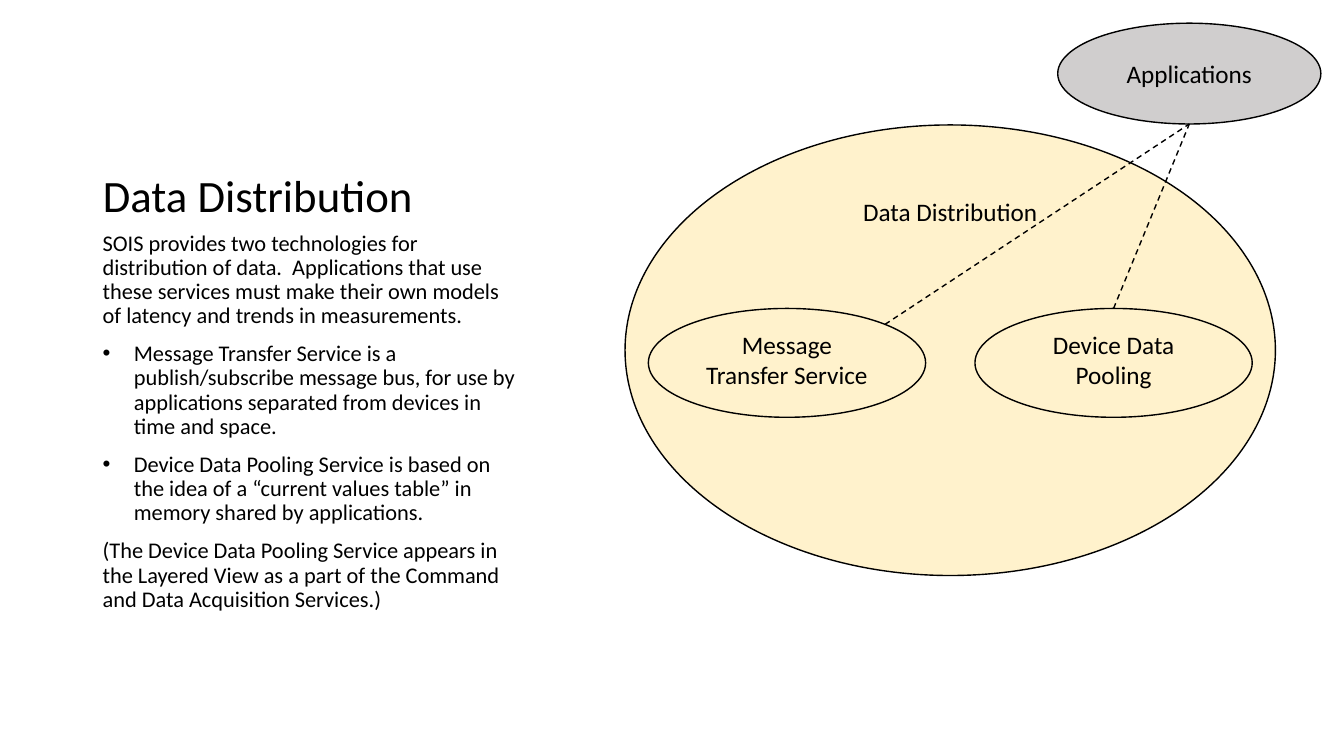
from math import cos, radians, sin

from lxml import etree
from pptx import Presentation
from pptx.dml.color import RGBColor
from pptx.enum.dml import MSO_LINE
from pptx.enum.shapes import MSO_CONNECTOR, MSO_SHAPE
from pptx.enum.text import MSO_ANCHOR, MSO_AUTO_SIZE, PP_ALIGN
from pptx.oxml.ns import qn
from pptx.util import Inches, Pt

OVAL, LINE, DASH = MSO_SHAPE.OVAL, MSO_CONNECTOR.STRAIGHT, MSO_LINE.DASH
TOP, MIDDLE, BOTTOM = MSO_ANCHOR.TOP, MSO_ANCHOR.MIDDLE, MSO_ANCHOR.BOTTOM
LEFT, CENTER = PP_ALIGN.LEFT, PP_ALIGN.CENTER
BLACK = RGBColor(0x00, 0x00, 0x00)
CREAM = RGBColor(0xFF, 0xF2, 0xCC)
GRAY = RGBColor(0xD0, 0xCE, 0xCE)
WIDE, HIGH = Inches(13.33), Inches(7.5)
INDENT = Inches(0.31)
FONT = "Calibri"

TIGHT = {"alignment": LEFT, "line_spacing": 0.9, "space_before": Pt(10)}
HEAD = {"alignment": LEFT, "line_spacing": 0.9, "space_before": Pt(0)}
MID = {"alignment": CENTER}

# Each entry: text, bulleted
BODY = [
    ("SOIS provides two technologies for distribution of data.  Applications "
     "that use these services must make their own models of latency and "
     "trends in measurements.", False),
    ("Message Transfer Service is a publish/subscribe message bus, for use by "
     "applications separated from devices in time and space.", True),
    ("Device Data Pooling Service is based on the idea of a “current values "
     "table” in memory shared by applications.", True),
    ("(The Device Data Pooling Service appears in the Layered View as a part "
     "of the Command and Data Acquisition Services.)", False),
]


def box(x, y, w, h):
    """Turn percentages of the slide into left, top, width and height."""
    return [round(size * part / 100)
            for size, part in zip((WIDE, HIGH, WIDE, HIGH), (x, y, w, h))]


def place(shape, area):
    for name, value in zip(("left", "top", "width", "height"), area):
        setattr(shape, name, value)


def frame(shape, anchor):
    text = shape.text_frame
    form = {"word_wrap": True, "auto_size": MSO_AUTO_SIZE.NONE,
            "vertical_anchor": anchor}
    for name, value in form.items():
        setattr(text, name, value)
    return text


def write(para, text, size, form):
    for name, value in form.items():
        setattr(para, name, value)
    run = para.add_run()
    run.text = text
    run.font.name = FONT
    run.font.size = Pt(size)
    run.font.color.rgb = BLACK


def bullet(para):
    props = para._p.get_or_add_pPr()
    props.set("marL", str(INDENT))
    props.set("indent", str(-INDENT))
    font = etree.SubElement(props, qn("a:buFont"))
    font.set("typeface", "Arial")
    mark = etree.SubElement(props, qn("a:buChar"))
    mark.set("char", "•")


def title(slide, text, area):
    shape = slide.shapes.title
    place(shape, area)
    write(frame(shape, BOTTOM).paragraphs[0], text, 32, HEAD)


def prose(slide, items, area):
    text = frame(slide.shapes.add_textbox(*area), TOP)
    for i, (words, marked) in enumerate(items):
        para = text.add_paragraph() if i else text.paragraphs[0]
        write(para, words, 16, TIGHT)
        if marked:
            bullet(para)


def oval(slide, text, area, fill=CREAM, anchor=TOP):
    shape = slide.shapes.add_shape(OVAL, *area)
    shape.shadow.inherit = False
    shape.fill.solid()
    shape.fill.fore_color.rgb = fill
    shape.line.color.rgb = BLACK
    shape.line.width = Pt(1)
    write(frame(shape, anchor).paragraphs[0], text, 18, MID)
    return shape


def rim(shape, angle):
    """Find the point on an oval's edge, in degrees clockwise from the right."""
    turn = radians(angle)
    return (round(shape.left + shape.width * (1 + cos(turn)) / 2),
            round(shape.top + shape.height * (1 + sin(turn)) / 2))


def link(slide, start, end):
    line = slide.shapes.add_connector(LINE, *start, *end)
    line.line.color.rgb = BLACK
    line.line.width = Pt(1)
    line.line.dash_style = DASH
    etree.SubElement(line._element.spPr, qn("a:effectLst"))


def main():
    deck = Presentation()
    deck.slide_width, deck.slide_height = WIDE, HIGH
    slide = deck.slides.add_slide(deck.slide_layouts[5])

    title(slide, "Data Distribution", box(6.9, 6.67, 32.26, 23.33))
    prose(slide, BODY, box(6.9, 30, 32.26, 55.6))

    oval(slide, "Data Distribution", box(46.51, 16.53, 48.39, 59.6))
    bus, pool = [
        oval(slide, name, box(48.24 + 24.3 * i, 40.8, 20.63, 14.4))
        for i, name in enumerate(("Message Transfer Service",
                                  "Device Data Pooling"))]
    apps = oval(slide, "Applications", box(78.7, 3.07, 19.58, 13.33),
                GRAY, MIDDLE)

    for part, angle in ((pool, -90), (bus, -45)):
        link(slide, rim(part, angle), rim(apps, 90))

    deck.save("out.pptx")


if __name__ == "__main__":
    main()
